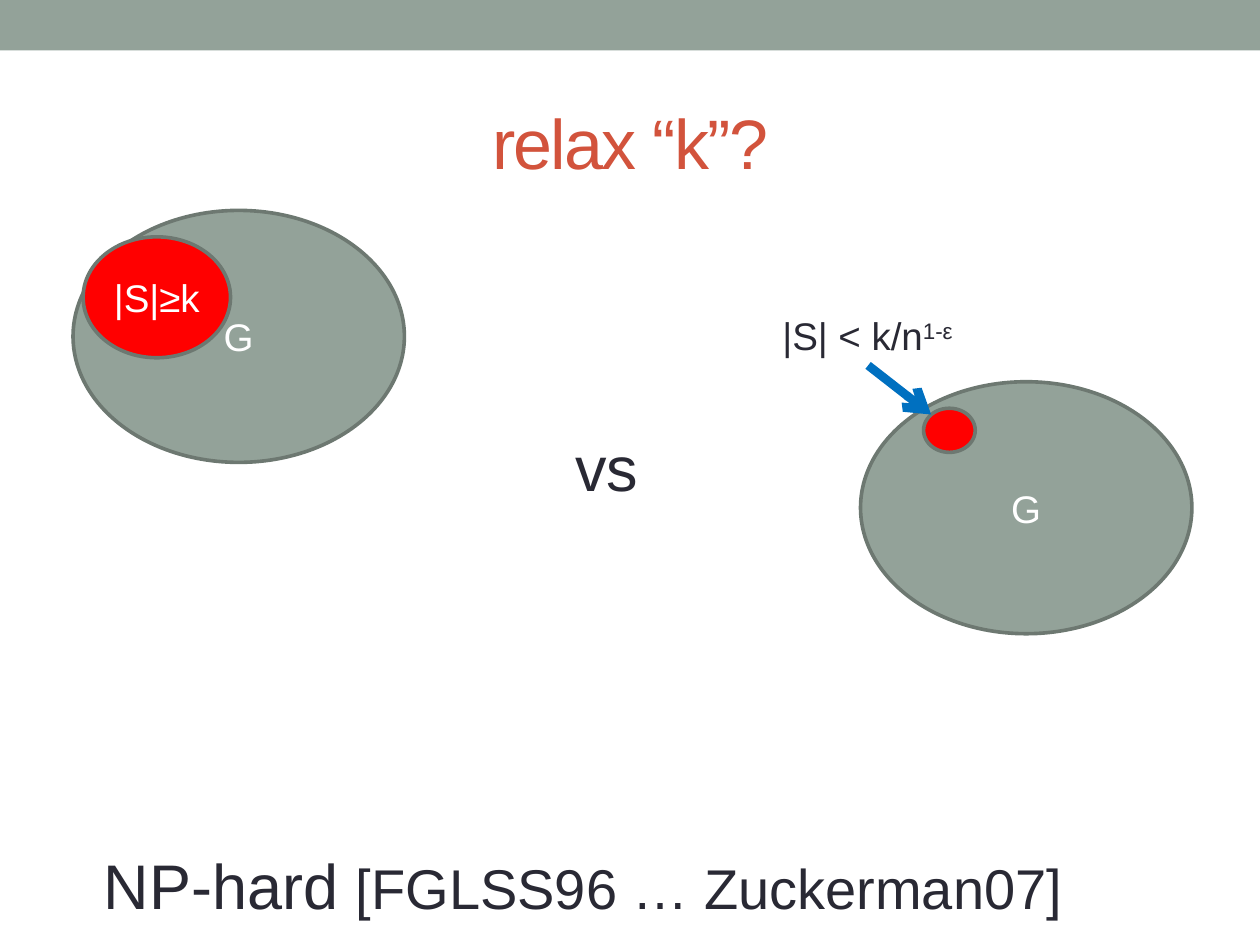
from pptx import Presentation
from pptx.dml.color import RGBColor
from pptx.enum.shapes import MSO_CONNECTOR, MSO_SHAPE
from pptx.enum.text import MSO_ANCHOR, MSO_AUTO_SIZE, PP_ALIGN
from pptx.oxml.ns import qn
from pptx.util import Inches, Pt
from lxml.etree import SubElement

THEME = {
    "font": "Arial",
    "sage": "93A299", "edge": "6D7871", "red": "FF0000", "blue": "0070C0",
    "rust": "D2533C", "dark": "292934", "white": "FFFFFF",
    "title": 40, "large": 36, "cite": 32, "label": 22,
    "rim": 2.08, "arrow": 5,
}

# Content: runs are (text, size, extra run attributes)
TITLE = [("relax “k”?", "title", {"spc": "-100"})]
BAND = (0, 0, 10, 0.4)
TITLE_BOX = (0.5, 0.58, 9, 1.08)
GRAPH = [("G", "label", {})]
OVALS = [  # box, fill, runs, wrap
    ((0.58, 1.67, 2.63, 2), "sage", GRAPH, True),
    ((0.66, 1.88, 1.17, 0.96), "red", [("|S|≥k", "label", {})], False),
    ((6.83, 3.03, 2.63, 2), "sage", GRAPH, True),
    ((7.33, 3.24, 0.41, 0.35), "red", [], True),
]
NOTES = [
    ((0.69, 6.67, 7.88, 0.71),
     [("NP-hard ", "large", {}), ("[FGLSS96 … Zuckerman07]", "cite", {})]),
    ((4.46, 3.35, 0.71, 0.71), [("vs", "large", {})]),
    ((6.08, 2.43, 1.61, 0.47),
     [("|S| < k/n", "label", {}), ("1-ε", "label", {"baseline": "30000"})]),
]
ARROW = (6.89, 2.9, 7.39, 3.29)


def color(name):
    return RGBColor.from_string(THEME[name])


def inches(box):
    return [Inches(v) for v in box]


def write(shape, runs, ink, **form):
    frame = shape.text_frame
    for key, value in form.items():
        setattr(frame, key, value)
    para = frame.paragraphs[0]
    para.alignment = PP_ALIGN.CENTER
    for text, size, extra in runs:
        run = para.add_run()
        run.text = text
        style = {"name": THEME["font"], "size": Pt(THEME[size]), "bold": False}
        for key, value in style.items():
            setattr(run.font, key, value)
        run.font.color.rgb = color(ink)
        for key, value in extra.items():
            run.font._element.set(key, value)


def draw(slide, kind, box, fill, rim=None):
    shape = slide.shapes.add_shape(kind, *inches(box))
    shape.shadow.inherit = False
    shape.fill.solid()
    shape.fill.fore_color.rgb = color(fill)
    if rim:
        shape.line.color.rgb = color(rim)
        shape.line.width = Pt(THEME["rim"])
    else:
        shape.line.fill.background()
    return shape


def main():
    deck = Presentation()
    deck.slide_width, deck.slide_height = Inches(10), Inches(7.5)
    slide = deck.slides.add_slide(deck.slide_layouts[5])

    # Top band and title
    draw(slide, MSO_SHAPE.RECTANGLE, BAND, "sage")
    title = slide.shapes.title
    for key, value in zip(("left", "top", "width", "height"), inches(TITLE_BOX)):
        setattr(title, key, value)
    write(title, TITLE, "rust", vertical_anchor=MSO_ANCHOR.MIDDLE,
          auto_size=MSO_AUTO_SIZE.NONE)

    # Graphs and their subsets
    for box, fill, runs, wrap in OVALS:
        oval = draw(slide, MSO_SHAPE.OVAL, box, fill, "edge")
        write(oval, runs, "white", word_wrap=wrap,
              vertical_anchor=MSO_ANCHOR.MIDDLE)

    # Free text
    for box, runs in NOTES:
        note = slide.shapes.add_textbox(*inches(box))
        write(note, runs, "dark", word_wrap=False,
              auto_size=MSO_AUTO_SIZE.SHAPE_TO_FIT_TEXT)

    # Arrow from the label to the small subset
    arrow = slide.shapes.add_connector(MSO_CONNECTOR.STRAIGHT, *inches(ARROW))
    arrow.line.color.rgb = color("blue")
    arrow.line.width = Pt(THEME["arrow"])
    SubElement(arrow.line._get_or_add_ln(), qn("a:tailEnd"), type="arrow")
    SubElement(arrow._element.spPr, qn("a:effectLst"))

    deck.save("out.pptx")


if __name__ == "__main__":
    main()
